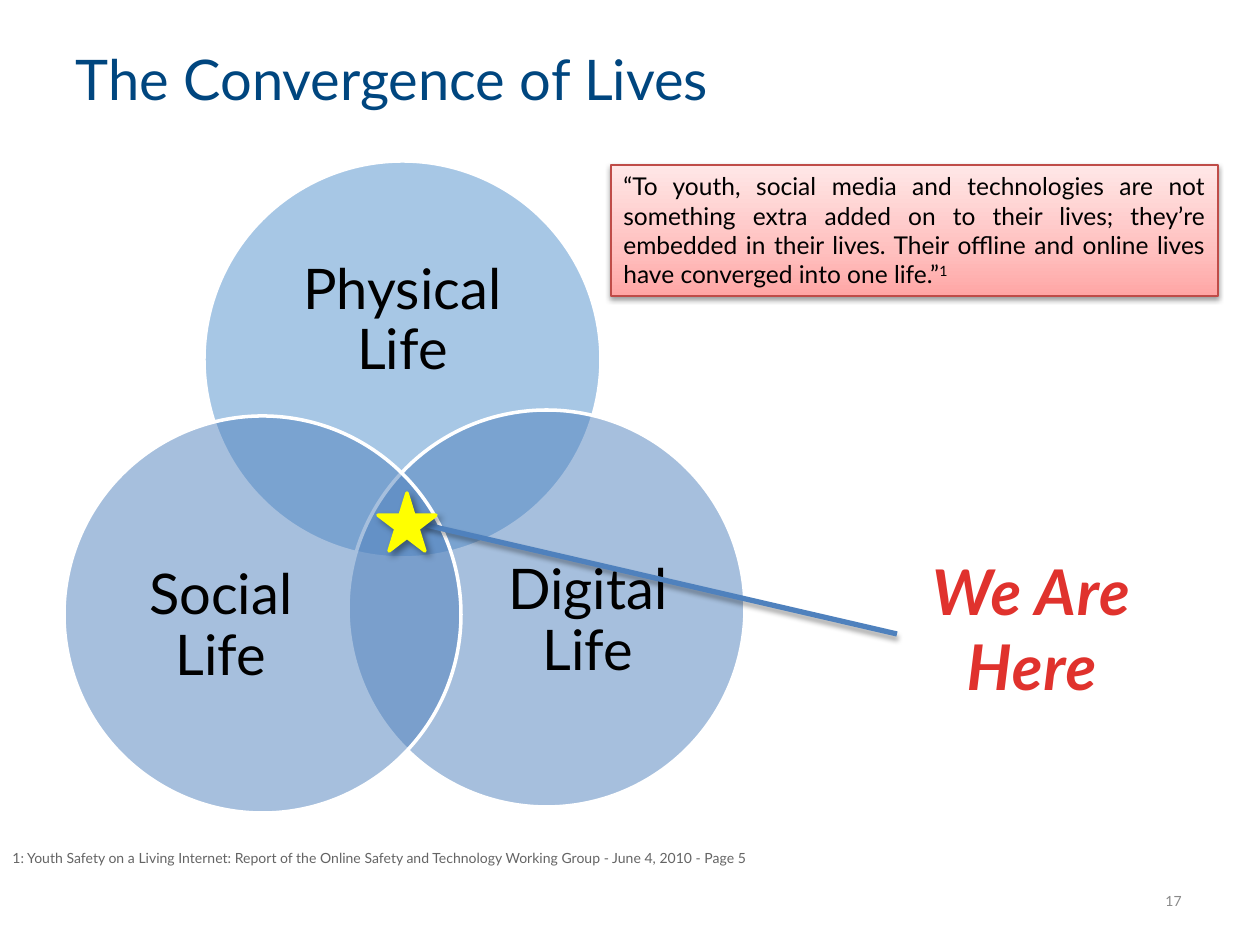
from copy import deepcopy

from lxml.etree import SubElement
from pptx import Presentation
from pptx.dml.color import RGBColor
from pptx.enum.shapes import MSO_CONNECTOR as Link, MSO_SHAPE as Preset
from pptx.enum.text import MSO_ANCHOR as Anchor, MSO_AUTO_SIZE as Fit, PP_ALIGN as Align
from pptx.oxml.ns import qn
from pptx.util import Emu, Pt

PX = 914400 / 126
FONT = "Lato"
CIRCLE_SIZE = 397
COLORS = {
    "title": "00467F", "text": "000000", "white": "FFFFFF",
    "sky": "5191CD", "blue": "4F81BD", "star": "FFFF00",
    "callout": "E0322D", "quote_line": "BF4C48",
    "quote_dark": "FFA6A5", "quote_mid": "FFC0BF", "quote_light": "FFE7E7",
    "number": "898989", "source": "646464", "shadow": "000000",
}
CIRCLES = [
    ("Physical Life", "sky", (204, 161), (257, 232, 291, 179)),
    ("Digital Life", "blue", (348, 410), (469, 513, 238, 218)),
    ("Social Life", "blue", (64, 416), (102, 518, 238, 218)),
]
QUOTE = (
    "“To youth, social media and technologies are not something extra added on "
    "to their lives; they’re embedded in their lives. Their offline and online "
    "lives have converged into one life.”"
)
SOURCE = (
    "1: Youth Safety on a Living Internet: Report of the Online Safety and "
    "Technology Working Group - June 4, 2010 - Page 5"
)


def px(*lengths):
    return [Emu(round(length * PX)) for length in lengths]


def color(name):
    return RGBColor.from_string(COLORS[name])


def apply(target, values):
    for name, value in values.items():
        setattr(target, name, value)


def add_span(para, text, size, color_name, raw=None, **font):
    span = para.add_run()
    span.text = text
    apply(span.font, {"name": FONT, "size": Pt(size), **font})
    span.font.color.rgb = color(color_name)
    for name, value in (raw or {}).items():
        span.font._element.set(name, value)


def write(shape, text, size, color_name, frame=None, para=None, **span):
    apply(shape.text_frame, {"word_wrap": True, **(frame or {})})
    first = shape.text_frame.paragraphs[0]
    apply(first, para or {})
    add_span(first, text, size, color_name, **span)
    return first


def add_text(page, place, *content, **formats):
    box = page.shapes.add_textbox(*px(*place))
    write(box, *content, **formats)


def set_line(shape, color_name, width):
    shape.line.color.rgb = color(color_name)
    shape.line.width = Pt(width)


def set_shadow(shape, alpha, blur, distance, angle):
    props = shape._element.spPr
    effects = props.find(qn("a:effectLst"))
    if effects is None:
        effects = SubElement(props, qn("a:effectLst"))
    shadow = SubElement(
        effects, qn("a:outerShdw"), blurRad=str(Pt(blur)), dist=str(Pt(distance)),
        dir=str(angle * 60000), rotWithShape="0")
    tone = SubElement(shadow, qn("a:srgbClr"), val=COLORS["shadow"])
    SubElement(tone, qn("a:alpha"), val=str(alpha * 1000))


def add_shape(page, preset, place, line, width, fill=None):
    shape = page.shapes.add_shape(preset, *px(*place))
    shape.shadow.inherit = False
    if fill:
        shape.fill.solid()
        shape.fill.fore_color.rgb = color(fill)
    set_line(shape, line, width)
    return shape


def add_circle(page, label, fill, corner, label_place):
    place = (*corner, CIRCLE_SIZE, CIRCLE_SIZE)
    circle = add_shape(page, Preset.OVAL, place, "white", 2, fill)
    tone = circle._element.spPr.find(f"{qn('a:solidFill')}/{qn('a:srgbClr')}")
    SubElement(tone, qn("a:alpha"), val="50000")
    margins = dict.fromkeys(
        ("margin_left", "margin_top", "margin_right", "margin_bottom"), 0)
    add_text(page, label_place, label, 32, "text",
             frame={"vertical_anchor": Anchor.MIDDLE, **margins},
             para={"alignment": Align.CENTER, "line_spacing": 0.9})


def add_pointer(page, start, end):
    pointer = page.shapes.add_connector(Link.STRAIGHT, *px(*start, *end))
    set_line(pointer, "blue", 3)
    set_shadow(pointer, 35, 3.1, 1.8, 90)


def add_star(page, place):
    star = add_shape(page, Preset.STAR_5_POINT, place, "star", 2, "star")
    SubElement(star.line._ln, qn("a:round"))
    set_shadow(star, 40, 4, 3, 45)


def add_quote(page, place):
    box = add_shape(page, Preset.RECTANGLE, place, "quote_line", 0.75)
    box.fill.gradient()
    box.fill.gradient_angle = 90
    stops = box._element.spPr.find(f"{qn('a:gradFill')}/{qn('a:gsLst')}")
    stops.insert(1, deepcopy(stops[0]))
    tones = [(0, "quote_dark"), (0.35, "quote_mid"), (1, "quote_light")]
    for stop, (position, name) in zip(box.fill.gradient_stops, tones):
        stop.position = position
        stop.color.rgb = color(name)
    set_shadow(box, 38, 3.1, 1.6, 90)
    para = write(box, QUOTE, 14, "text",
                 frame={"vertical_anchor": Anchor.TOP,
                        "auto_size": Fit.SHAPE_TO_FIT_TEXT},
                 para={"alignment": Align.JUSTIFY})
    add_span(para, "1", 14, "text", raw={"baseline": "30000"})


def add_title(page, text, place):
    title = page.shapes.title
    apply(title, dict(zip(("left", "top", "width", "height"), px(*place))))
    write(title, text, 32, "title", frame={"vertical_anchor": Anchor.MIDDLE},
          para={"alignment": Align.LEFT})


def main():
    deck = Presentation()
    deck.slide_width, deck.slide_height = px(1260, 945)
    page = deck.slides.add_slide(deck.slide_layouts[5])
    grow = {"auto_size": Fit.SHAPE_TO_FIT_TEXT}

    add_title(page, "The Convergence of Lives", (63, 11, 1134, 135))
    for circle in CIRCLES:
        add_circle(page, *circle)
    add_text(page, (1153, 876, 44, 50), "17", 8, "number",
             frame={"vertical_anchor": Anchor.MIDDLE})
    add_pointer(page, (426, 525), (897, 634))
    add_star(page, (378, 493, 58, 58))
    add_text(page, (898, 546, 267, 165), "We Are Here", 36, "callout", frame=grow,
             para={"alignment": Align.CENTER}, bold=True, italic=True,
             raw={"spc": "50"})
    add_quote(page, (611, 165, 607, 131))
    add_text(page, (0, 843, 1142, 30), SOURCE, 8, "source", frame=grow)
    deck.save("out.pptx")


if __name__ == "__main__":
    main()
